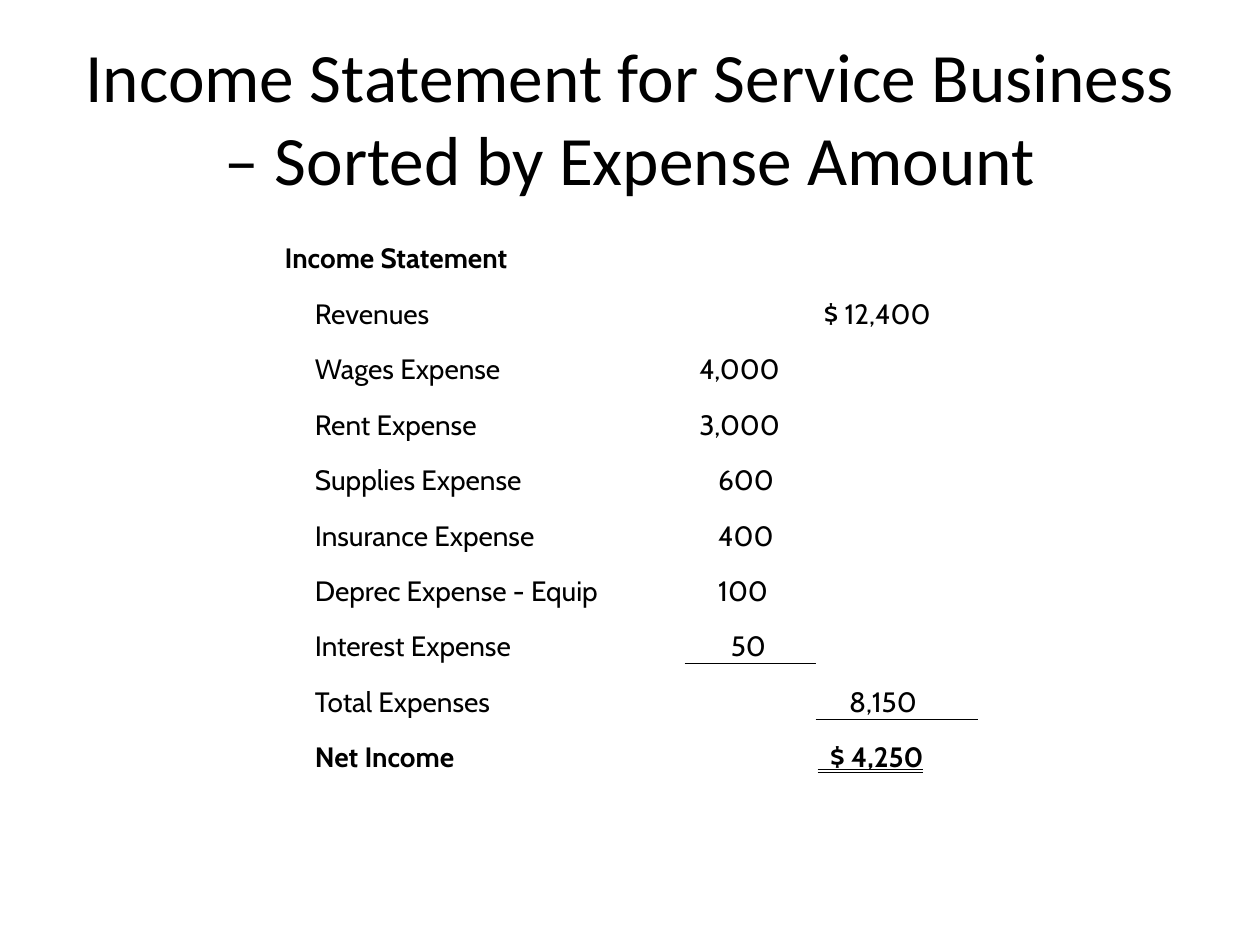
from lxml.etree import SubElement
from pptx import Presentation
from pptx.dml.color import RGBColor
from pptx.enum.text import MSO_ANCHOR, MSO_UNDERLINE, PP_ALIGN
from pptx.oxml.ns import qn
from pptx.util import Inches, Pt

BLACK = "000000"
COLUMN_WIDTHS = [0.24, 2.95, 1.04, 1.28]
ROW_HEIGHT = 0.44
STATEMENT = [
    ("Revenues", 3, "$ 12,400", 0.05),
    ("Wages Expense", 2, "4,000", 0.1),
    ("Rent Expense", 2, "3,000", 0.1),
    ("Supplies Expense", 2, "600", 0.25),
    ("Insurance Expense", 2, "400", 0.25),
    ("Deprec Expense - Equip", 2, "100", 0.25),
    ("Interest Expense", 2, "50", 0.35),
    ("Total Expenses", 3, "8,150", 0.25),
    ("Net Income", 3, "  $ 4,250", 0),
]


def color(value):
    """Turn a hex string into a colour."""
    return RGBColor.from_string(value)


def style_font(font, name, size, bold=False):
    """Set the typeface, size, weight and colour of a font."""
    font.name, font.size, font.bold = name, Pt(size), bold
    font.color.rgb = color(BLACK)


def add_title(page, text):
    """Add the centred title."""
    box = page.shapes.add_textbox(Inches(0.5), Inches(0.3), Inches(9), Inches(1.25))
    frame = box.text_frame
    frame.word_wrap = True
    frame.vertical_anchor = MSO_ANCHOR.MIDDLE
    para = frame.paragraphs[0]
    para.text = text
    para.alignment = PP_ALIGN.CENTER
    style_font(para.font, "Calibri", 39.6)


def write_cell(cell, text, bold=False, indent=0):
    """Write text at the bottom of a cell, indented in inches."""
    cell.text = text
    cell.margin_left = Inches(0.01 + indent)
    para = cell.text_frame.paragraphs[0]
    style_font(para.font, "Cabin", 16, bold)


def clear_cell(cell):
    """Remove the fill of a cell and set its margins and anchor."""
    cell.fill.background()
    cell.margin_left = cell.margin_right = cell.margin_top = Inches(0.01)
    cell.margin_bottom = 0
    cell.vertical_anchor = MSO_ANCHOR.BOTTOM


def add_border(cell, side):
    """Draw a thin black border on one side of a cell."""
    properties = cell._tc.get_or_add_tcPr()
    line = SubElement(properties, qn(f"a:{side}"), w=str(Pt(0.5)))
    fill = SubElement(line, qn("a:solidFill"))
    SubElement(fill, qn("a:srgbClr"), val=BLACK)
    properties.insert(0, line)


def rule_below(table, row, column):
    """Draw a sum line between a cell and the one below it."""
    add_border(table.cell(row, column), "lnB")
    add_border(table.cell(row + 1, column), "lnT")


def add_statement(page):
    """Add the income statement as a table."""
    count = len(STATEMENT) + 1
    table = page.shapes.add_table(
        count, len(COLUMN_WIDTHS), Inches(2.25), Inches(1.75),
        Inches(sum(COLUMN_WIDTHS)), Inches(count * ROW_HEIGHT)).table
    table.first_row = table.horz_banding = False
    for column, width in zip(table.columns, COLUMN_WIDTHS):
        column.width = Inches(width)
    for row in table.rows:
        row.height = Inches(ROW_HEIGHT)
    for cell in table.iter_cells():
        clear_cell(cell)
    table.cell(0, 0).merge(table.cell(0, 1))
    write_cell(table.cell(0, 0), "Income Statement", True)
    for row, (label, column, amount, indent) in enumerate(STATEMENT, 1):
        bold = label == "Net Income"
        write_cell(table.cell(row, 1), label, bold)
        write_cell(table.cell(row, column), amount, bold, indent)
    net_income = table.cell(count - 1, 3).text_frame.paragraphs[0]
    net_income.runs[0].font.underline = MSO_UNDERLINE.DOUBLE_LINE
    rule_below(table, count - 3, 2)
    rule_below(table, count - 2, 3)


def main():
    """Build the slide and save it."""
    deck = Presentation()
    deck.slide_width, deck.slide_height = Inches(10), Inches(7.5)
    page = deck.slides.add_slide(deck.slide_layouts[6])
    add_title(page, "Income Statement for Service Business – Sorted by Expense Amount")
    add_statement(page)
    deck.save("out.pptx")


if __name__ == "__main__":
    main()
